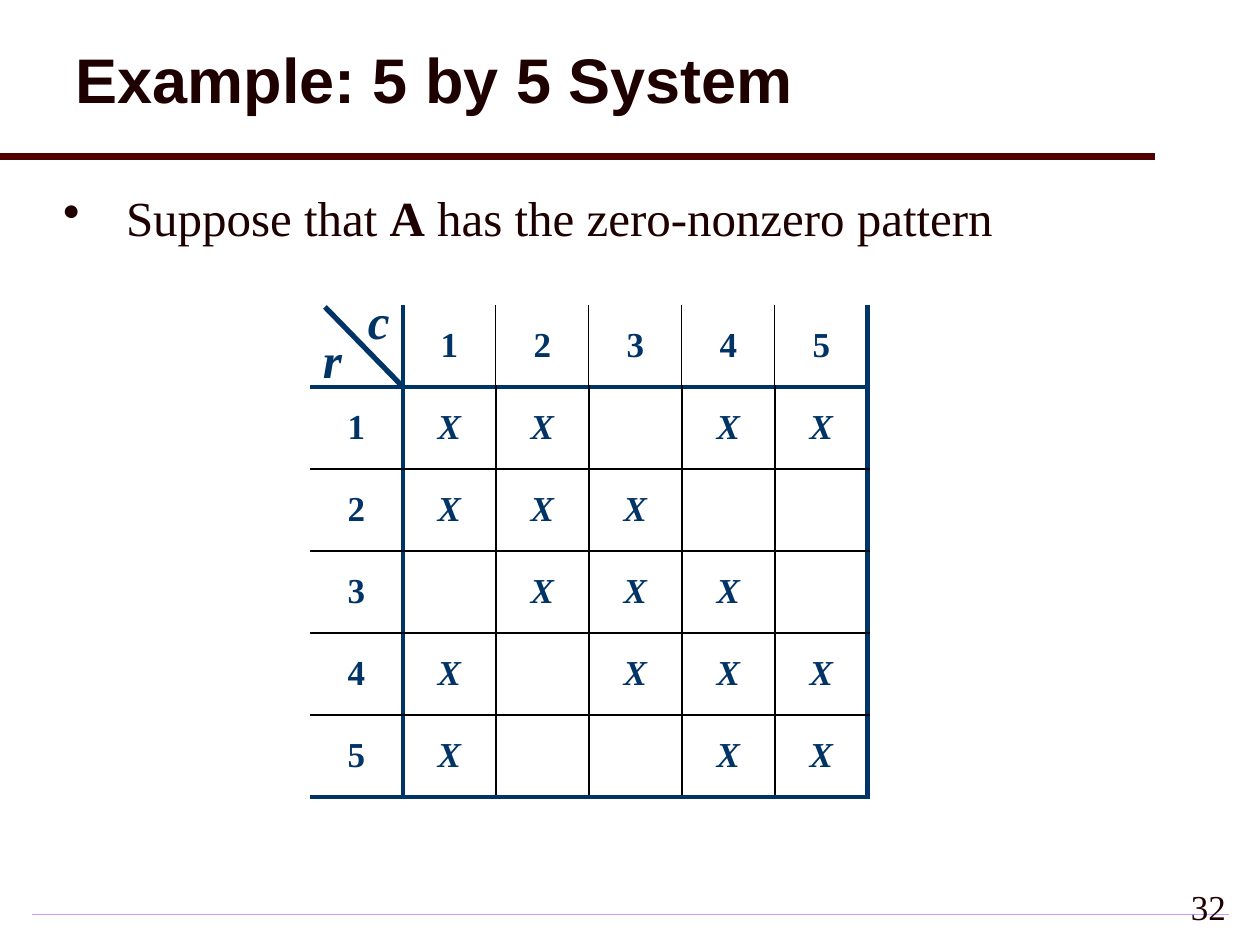
"""Build the slide showing the zero-nonzero pattern of a 5 by 5 system."""
import typing

import lxml.etree
import pptx
import pptx.dml.color
import pptx.enum.dml
import pptx.enum.shapes
import pptx.enum.text
import pptx.oxml.ns
import pptx.util

ALIGN = pptx.enum.text.PP_ALIGN
MIDDLE = pptx.enum.text.MSO_ANCHOR.MIDDLE
INK = "1E0000"
NAVY = "003366"
BLACK = "000000"
SERIF = "Times New Roman"
PX_PER_INCH = 126
COLUMN_WIDTH, ROW_HEIGHT = 93, 82
PATTERN = ["XX.XX", "XXX..", ".XXX.", "X.XXX", "X..XX"]
SIZE = len(PATTERN)


class Box(typing.NamedTuple):
    left: int
    top: int
    width: int
    height: int


class Label(typing.NamedTuple):
    text: str
    box: Box


AXIS_LABELS = [Label("r", Box(310, 317, 26, 72)), Label("c", Box(355, 278, 26, 72))]


def px(length: int) -> pptx.util.Emu:
    """Turn px into EMU."""
    return pptx.util.Emu(round(length * 914400 / PX_PER_INCH))


def rgb(value: str) -> pptx.dml.color.RGBColor:
    """Turn a hex string into a colour."""
    return pptx.dml.color.RGBColor.from_string(value)


def child(parent, tag: str, **attributes: str):
    """Append an XML element with its attributes."""
    return lxml.etree.SubElement(parent, pptx.oxml.ns.qn(tag), attributes)


def write(paragraph, text: str, *, size: int = 28, font: str = SERIF, color: str = INK,
          bold: bool = False, italic: bool = False, align=ALIGN.LEFT) -> None:
    """Add a formatted run to a paragraph."""
    paragraph.alignment = align
    run = paragraph.add_run()
    run.text = text
    run.font.size = pptx.util.Pt(size)
    run.font.name = font
    run.font.color.rgb = rgb(color)
    run.font.bold = bold
    run.font.italic = italic


def add_text_box(slide, box: Box, right_inset: int = 13):
    """Add a wrapping text box and return its frame."""
    frame = slide.shapes.add_textbox(*map(px, box)).text_frame
    frame.word_wrap = True
    frame.margin_left, frame.margin_right = px(13), px(right_inset)
    frame.margin_top, frame.margin_bottom = px(12), px(6)
    return frame


def add_line(slide, start: tuple[int, int], end: tuple[int, int], color: str, width: int) -> None:
    """Add a straight line without a shadow."""
    line = slide.shapes.add_connector(
        pptx.enum.shapes.MSO_CONNECTOR.STRAIGHT, *map(px, start + end))
    line.line.color.rgb = rgb(color)
    line.line.width = pptx.util.Pt(width)
    child(line._element.spPr, "a:effectLst")


def add_footer_rule(slide) -> None:
    """Add the thin gradient rule at the foot."""
    rule = slide.shapes.add_shape(
        pptx.enum.shapes.MSO_SHAPE.RECTANGLE, *map(px, Box(32, 914, 1197, 1)))
    rule.shadow.inherit = False
    rule.line.fill.background()
    rule.fill.gradient()
    for stop, color in zip(rule.fill.gradient_stops, ("CC99FF", "F3EBFF")):
        stop.color.rgb = rgb(color)
    gradient = rule._element.spPr.find(pptx.oxml.ns.qn("a:gradFill"))
    gradient.remove(gradient.find(pptx.oxml.ns.qn("a:lin")))
    focus = child(gradient, "a:path", path="shape")
    child(focus, "a:fillToRect", l="50000", t="50000", r="50000", b="50000")


def add_border(properties, tag: str, index: int, in_header: bool) -> None:
    """Draw the grid line with this index on one side of a cell."""
    heavy = index in (1, SIZE + 1)
    points = 3 if heavy else 0.75 if in_header else 1
    border = child(properties, tag, w=str(pptx.util.Pt(points)))
    if index == 0:
        child(border, "a:noFill")
    else:
        fill = child(border, "a:solidFill")
        child(fill, "a:srgbClr", val=NAVY if heavy else BLACK)


def format_cell(cell, row: int, column: int) -> None:
    """Fill in one cell and draw its borders."""
    properties = cell._tc.get_or_add_tcPr()
    for tag, index, in_header in (
            ("a:lnL", column, row == 0), ("a:lnR", column + 1, row == 0),
            ("a:lnT", row, column == 0), ("a:lnB", row + 1, column == 0)):
        add_border(properties, tag, index, in_header)
    cell.fill.background()
    cell.vertical_anchor = MIDDLE
    is_entry = row > 0 and column > 0
    text = PATTERN[row - 1][column - 1] if is_entry else str(row + column)
    if text not in (".", "0"):
        write(cell.text_frame.paragraphs[0], text, size=20, color=NAVY,
              bold=True, italic=is_entry, align=ALIGN.CENTER)


def add_pattern(slide) -> None:
    """Add the pattern table with its row and column numbers."""
    count = SIZE + 1
    box = Box(310, 305, count * COLUMN_WIDTH, count * ROW_HEIGHT)
    pattern = slide.shapes.add_table(count, count, *map(px, box)).table
    pattern.first_row = pattern.horz_banding = False
    for index in range(count):
        pattern.columns[index].width = px(COLUMN_WIDTH)
        pattern.rows[index].height = px(ROW_HEIGHT)
        for column in range(count):
            format_cell(pattern.cell(index, column), index, column)


def add_title(slide) -> None:
    """Place and format the title."""
    title = slide.shapes.title
    title.left, title.top, title.width, title.height = map(px, Box(63, 10, 1155, 147))
    title.text_frame.vertical_anchor = MIDDLE
    heading = title.text_frame.paragraphs[0]
    heading.line_spacing = 0.9
    write(heading, "Example: 5 by 5 System", size=36, font="Arial", bold=True)


def add_statement(slide) -> None:
    """Add the bulleted statement."""
    statement = add_text_box(slide, Box(50, 176, 1168, 514)).paragraphs[0]
    properties = statement._p.get_or_add_pPr()
    properties.set("marL", str(px(63)))
    properties.set("indent", str(px(-63)))
    child(child(properties, "a:buClr"), "a:srgbClr", val=INK)
    child(properties, "a:buChar", char="•")
    write(statement, "Suppose that ")
    write(statement, "A", bold=True)
    write(statement, " has the zero-nonzero pattern")


def main() -> None:
    """Build and save the slide."""
    deck = pptx.Presentation()
    deck.slide_width, deck.slide_height = px(1260), px(945)
    slide = deck.slides.add_slide(deck.slide_layouts[5])
    add_footer_rule(slide)
    add_line(slide, (0, 157), (1155, 157), "500000", 4)
    add_title(slide)
    add_statement(slide)
    add_pattern(slide)
    for label in AXIS_LABELS:
        frame = add_text_box(slide, label.box, right_inset=0)
        write(frame.paragraphs[0], label.text, color=NAVY, bold=True, italic=True)
    add_line(slide, (404, 388), (325, 307), NAVY, 3)
    page_number = add_text_box(slide, Box(977, 872, 262, 63))
    page_number.vertical_anchor = MIDDLE
    write(page_number.paragraphs[0], "32", size=20, align=ALIGN.RIGHT)
    deck.save("out.pptx")


if __name__ == "__main__":
    main()
